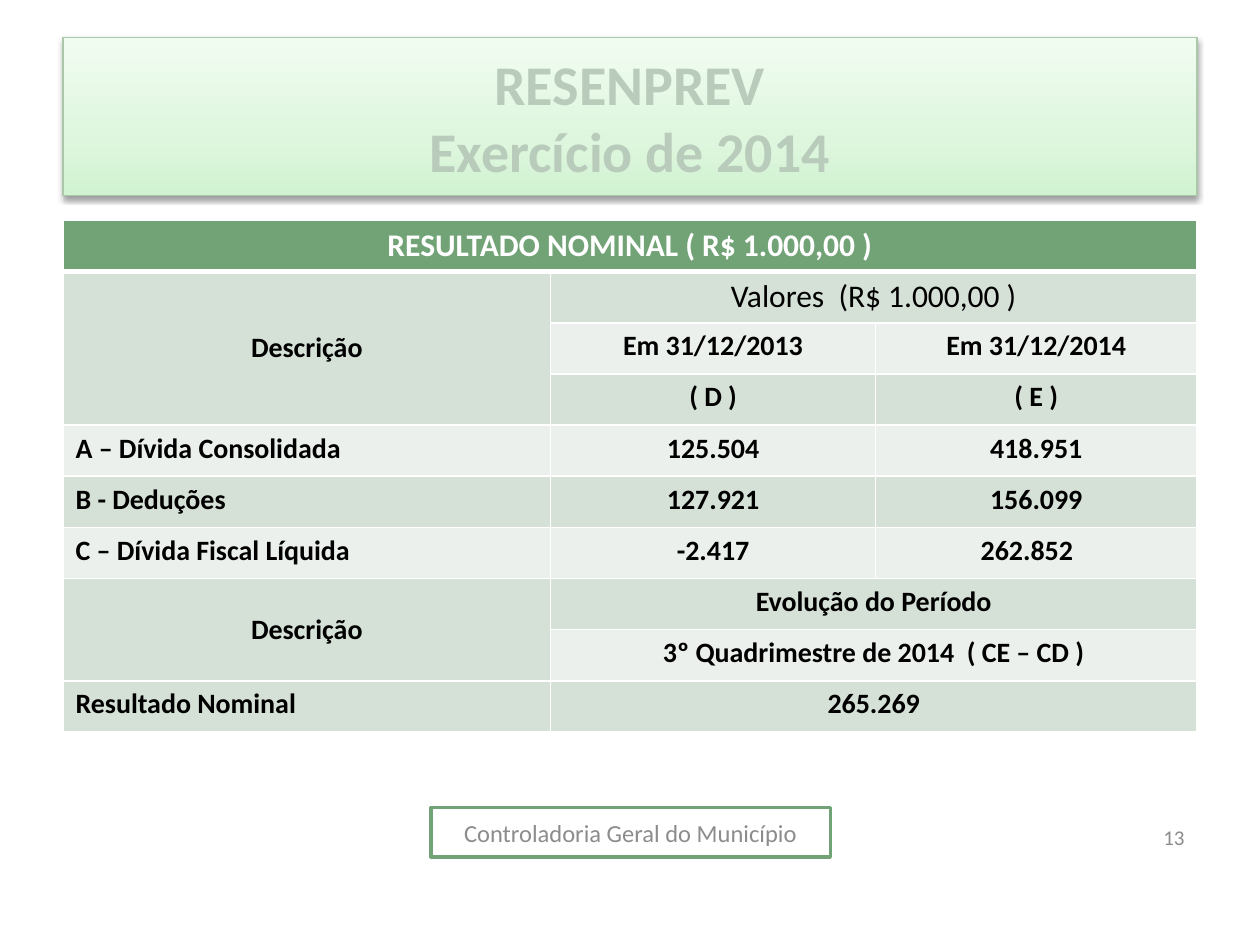
from copy import deepcopy

from lxml import etree
from pptx import Presentation
from pptx import util as u
from pptx.dml import color
from pptx.enum import shapes, text
from pptx.oxml import ns

LEFT, MID, RIGHT = text.PP_ALIGN.LEFT, text.PP_ALIGN.CENTER, text.PP_ALIGN.RIGHT
GREEN, PALE, LIGHT, GRAY = "72A376", "D5E0D6", "EBF0EC", "8C8C8C"
ROWS = [
    ["RESULTADO NOMINAL ( R$ 1.000,00 )", "", ""],
    ["Descrição", "Valores  (R$ 1.000,00 )", ""],
    ["", "Em 31/12/2013", "Em 31/12/2014"],
    ["", "( D )", "( E )"],
    ["A – Dívida Consolidada", "125.504", "418.951"],
    ["B - Deduções", "127.921", "156.099"],
    ["C – Dívida Fiscal Líquida", "-2.417", "262.852"],
    ["Descrição", "Evolução do Período", ""],
    ["", "3º Quadrimestre de 2014  ( CE – CD )", ""],
    ["Resultado Nominal", "265.269", ""],
]
SPANS = [(0, 0, 0, 2), (1, 0, 3, 0), (1, 1, 1, 2), (7, 0, 8, 0),
         (7, 1, 7, 2), (8, 1, 8, 2), (9, 1, 9, 2)]


def paint(code):
    return color.RGBColor.from_string(code)


def add(root, tag, **attrs):
    return etree.SubElement(root, ns.qn(tag), attrs)


class Deck:
    """Holds the font and the current slide, and draws each kind of element."""

    def __init__(self, slide, font="Calibri"):
        self.slide, self.font = slide, font

    def letter(self, frame, words, size, tint, bold=False, align=MID):
        frame.text = words
        for par in frame.paragraphs:
            par.alignment = align
            for run in par.runs:
                run.font.name, run.font.size = self.font, u.Pt(size)
                run.font.bold, run.font.color.rgb = bold, paint(tint)

    def label(self, words, box, size, tint, align=MID):
        item = self.slide.shapes.add_textbox(*map(u.Inches, box))
        item.text_frame.word_wrap = True
        item.text_frame.vertical_anchor = text.MSO_ANCHOR.MIDDLE
        self.letter(item.text_frame, words, size, tint, align=align)

    def panel(self, words, box, size, tint, edge, width, bold=False):
        item = self.slide.shapes.add_shape(
            shapes.MSO_SHAPE.RECTANGLE, *map(u.Inches, box))
        item.shadow.inherit = False
        item.fill.solid()
        item.fill.fore_color.rgb = paint("FFFFFF")
        item.line.color.rgb, item.line.width = paint(edge), u.Pt(width)
        item.text_frame.vertical_anchor = text.MSO_ANCHOR.MIDDLE
        self.letter(item.text_frame, words, size, tint, bold)
        return item

    def blend(self, item, stops):
        item.fill.gradient()
        item.fill.gradient_angle = 90
        group = item.fill.gradient_stops
        first = item.element.spPr.find(".//" + ns.qn("a:gs"))
        for _ in range(len(stops) - len(group)):
            first.addnext(deepcopy(first))
        for stop, (place, tint) in zip(item.fill.gradient_stops, stops):
            stop.position, stop.color.rgb = place, paint(tint)

    def shade(self, item):
        effect = item.element.spPr.find(ns.qn("a:effectLst"))
        drop = add(effect, "a:outerShdw", blurRad="40000", dist="20000",
                   dir="5400000", rotWithShape="0")
        add(add(drop, "a:srgbClr", val="000000"), "a:alpha", val="38000")

    def edge(self, cell, row):
        props = cell._tc.get_or_add_tcPr()
        for side in ("L", "R", "T", "B"):
            thick = (row, side) in ((0, "B"), (1, "T"))
            line = add(props, "a:ln" + side, w=str(u.Pt(3 if thick else 1)))
            add(add(line, "a:solidFill"), "a:srgbClr", val="FFFFFF")

    def table(self, rows, box, cols, spans):
        grid = self.slide.shapes.add_table(
            len(rows), len(cols), *map(u.Inches, box)).table
        for col, width in zip(grid.columns, cols):
            col.width = u.Inches(width)
        for r, row in enumerate(rows):
            for c, words in enumerate(row):
                cell = grid.cell(r, c)
                self.edge(cell, r)
                cell.fill.solid()
                cell.fill.fore_color.rgb = paint(
                    GREEN if r == 0 else PALE if r % 2 else LIGHT)
                large = r == 0 or (r, c) == (1, 1)
                left = c == 0 and r in (4, 5, 6, 9)
                self.letter(cell.text_frame, words, 18 if large else 16,
                            "000000" if r else "FFFFFF", (r, c) != (1, 1),
                            LEFT if left else MID)
                if words == "Descrição":
                    cell.vertical_anchor = text.MSO_ANCHOR.MIDDLE
        for top, left, low, right in spans:
            grid.cell(top, left).merge(grid.cell(low, right))
        return grid


def main():
    show = Presentation()
    show.slide_width, show.slide_height = u.Inches(10), u.Inches(7.5)
    deck = Deck(show.slides.add_slide(show.slide_layouts[6]))
    title = deck.panel("RESENPREV\vExercício de 2014", (0.5, 0.3, 9, 1.25),
                       32, "B9CBBA", "ABC8AB", 0.75, True)
    deck.blend(title, [(0, "D1F3D1"), (0.35, "DEF6DE"), (1, "F1FCF1")])
    deck.shade(title)
    grid = deck.table(ROWS, (0.5, 1.75, 9, 4.06), (3.87, 2.58, 2.55), SPANS)
    grid.cell(6, 2).margin_right = u.Inches(0.25)
    deck.panel("Controladoria Geral do Município", (3.42, 6.41, 3.17, 0.39),
               14, GRAY, GREEN, 2)
    deck.label("13", (7.17, 6.33, 2.33, 0.63), 12, GRAY, RIGHT)
    show.save("out.pptx")


if __name__ == "__main__":
    main()
